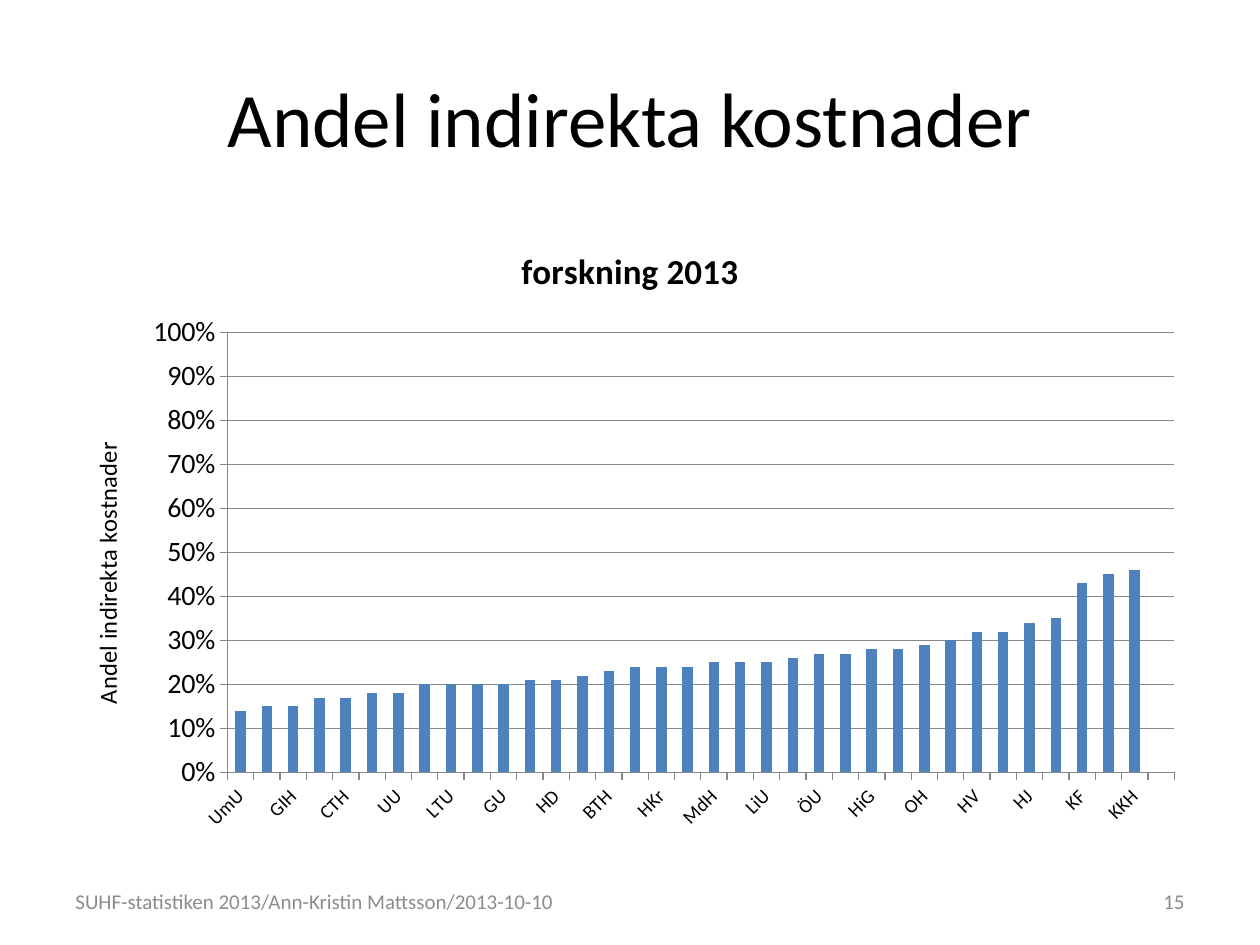
from lxml import etree
from pptx import Presentation
from pptx.chart.data import CategoryChartData
from pptx.dml.color import RGBColor
from pptx.enum.chart import XL_CHART_TYPE, XL_TICK_MARK
from pptx.enum.text import MSO_ANCHOR, PP_ALIGN
from pptx.oxml.ns import qn
from pptx.util import Pt

COLUMN = XL_CHART_TYPE.COLUMN_CLUSTERED
OUT, NONE = XL_TICK_MARK.OUTSIDE, XL_TICK_MARK.NONE
LEFT, MID, RIGHT = PP_ALIGN.LEFT, PP_ALIGN.CENTER, PP_ALIGN.RIGHT
BLACK = RGBColor(0x00, 0x00, 0x00)
GRAY = RGBColor(0x8C, 0x8C, 0x8C)
RULE = RGBColor(0x87, 0x87, 0x87)
BLUE = RGBColor(0x4F, 0x81, 0xBD)
FACE = "Calibri"

TEXTS = [
    ("Andel indirekta kostnader", (36, 21.6, 648, 90), 44, BLACK, MID),
    ("15", (516, 500.4, 168, 28.8), 12, GRAY, RIGHT),
    ("SUHF-statistiken 2013/Ann-Kristin Mattsson/2013-10-10",
     (36, 500.4, 358, 28.8), 12, GRAY, LEFT),
]
NAMES = (
    "UmU KI GIH HS CTH LU UU SLU LTU MAH GU FHS HD HH BTH KTH HKr LNU "
    "MdH MiU LiU SU ÖU KaU HiG HB OH DCH HV SH HJ KMH KF SDH KKH"
).split() + [""]
SHARES = [
    0.14, 0.15, 0.15, 0.17, 0.17, 0.18, 0.18, 0.2, 0.2, 0.2, 0.2, 0.21,
    0.21, 0.22, 0.23, 0.24, 0.24, 0.24, 0.25, 0.25, 0.25, 0.26, 0.27, 0.27,
    0.28, 0.28, 0.29, 0.3, 0.32, 0.32, 0.34, 0.35, 0.43, 0.45, 0.46, 0,
]
CHART_BOX = (36, 126, 648, 356.4)
PLOT = {"layoutTarget": "inner", "xMode": "edge", "yMode": "edge",
        "x": 0.145, "y": 0.18, "w": 0.835, "h": 0.705}


def style(font, size, color=BLACK, bold=False):
    look = {"name": FACE, "size": Pt(size), "bold": bold}
    for key, value in look.items():
        setattr(font, key, value)
    font.color.rgb = color


def add_text(slide, text, box, size, color, align):
    frame = slide.shapes.add_textbox(*map(Pt, box)).text_frame
    frame.word_wrap = True
    frame.vertical_anchor = MSO_ANCHOR.MIDDLE
    para = frame.paragraphs[0]
    para.alignment = align
    run = para.add_run()
    run.text = text
    style(run.font, size, color)


def add_title(owner, text, size, bold):
    frame = owner.text_frame
    frame.text = text
    style(frame.paragraphs[0].runs[0].font, size, bold=bold)


def place_plot(chart):
    area = chart.element.find(".//" + qn("c:plotArea"))
    for old in area.findall(qn("c:layout")):
        area.remove(old)
    layout = etree.Element(qn("c:layout"))
    area.insert(0, layout)
    manual = etree.SubElement(layout, qn("c:manualLayout"))
    for key, value in PLOT.items():
        etree.SubElement(manual, qn("c:" + key)).set("val", str(value))


def add_chart(slide):
    data = CategoryChartData(number_format="0%")
    data.categories = NAMES
    data.add_series("Series 1", SHARES)
    chart = slide.shapes.add_chart(COLUMN, *map(Pt, CHART_BOX), data).chart
    style(chart.font, 10)
    chart.has_legend = False
    chart.has_title = True
    add_title(chart.chart_title, "forskning 2013", 20, True)

    plot = chart.plots[0]
    plot.gap_width = 150
    plot.vary_by_categories = False
    fill = plot.series[0].format.fill
    fill.solid()
    fill.fore_color.rgb = BLUE

    cat, val = chart.category_axis, chart.value_axis
    for axis, size in ((cat, 11), (val, 16)):
        axis.major_tick_mark = OUT
        axis.minor_tick_mark = NONE
        axis.format.line.color.rgb = RULE
        style(axis.tick_labels.font, size)
    limits = {"minimum_scale": 0, "maximum_scale": 1, "major_unit": 0.1,
              "has_major_gridlines": True, "has_title": True}
    for key, value in limits.items():
        setattr(val, key, value)
    val.major_gridlines.format.line.color.rgb = RULE
    val.tick_labels.number_format = "0%"
    val.tick_labels.number_format_is_linked = False
    add_title(val.axis_title, "Andel indirekta kostnader", 14, False)

    turn = cat._element.find(qn("c:txPr")).find(qn("a:bodyPr"))
    turn.set("rot", "-2700000")
    turn.set("vert", "horz")
    skip = etree.Element(qn("c:tickLblSkip"))
    skip.set("val", "2")
    cat._element.find(qn("c:noMultiLvlLbl")).addprevious(skip)
    place_plot(chart)


def main():
    deck = Presentation()
    deck.slide_width, deck.slide_height = Pt(720), Pt(540)
    slide = deck.slides.add_slide(deck.slide_layouts[6])
    for item in TEXTS:
        add_text(slide, *item)
    add_chart(slide)
    deck.save("out.pptx")


if __name__ == "__main__":
    main()
